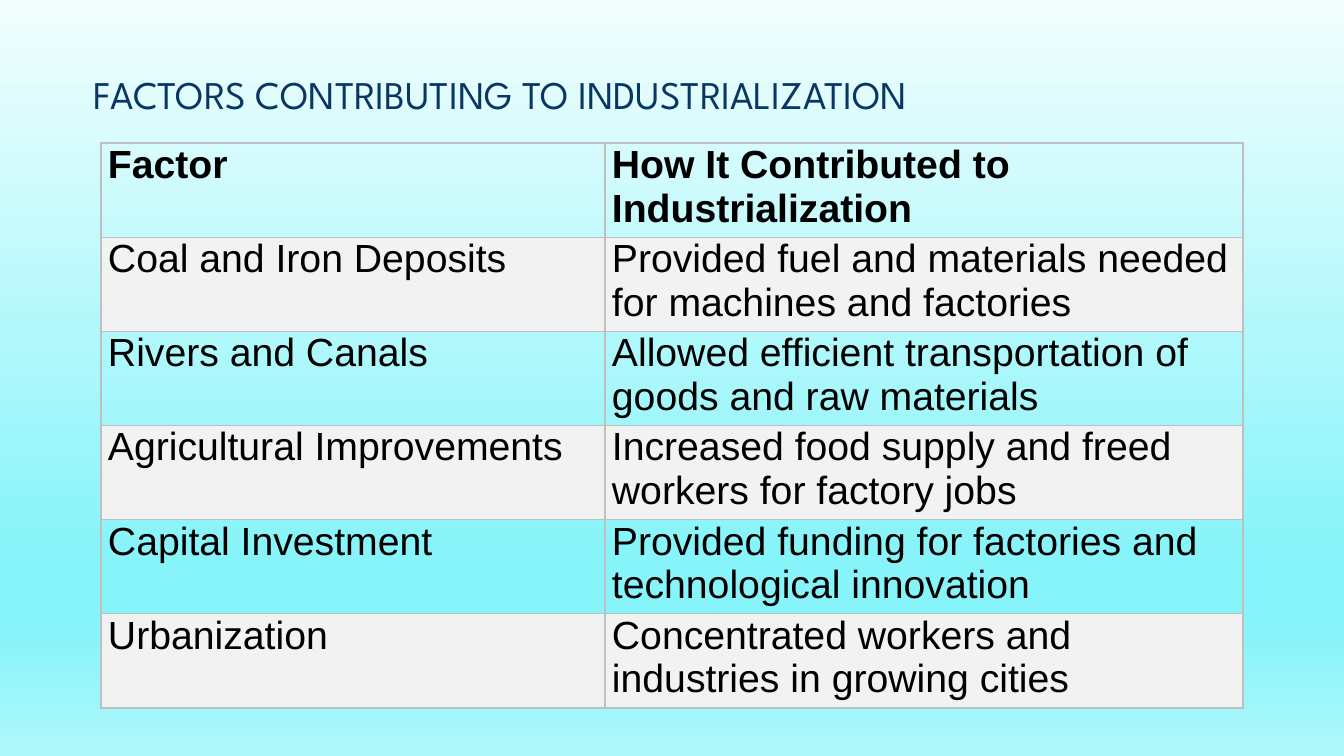
from lxml import etree
from pptx import Presentation, util as u
from pptx.dml.color import RGBColor
from pptx.enum import shapes, text
from pptx.oxml.ns import qn

# Content
TITLE = "FACTORS CONTRIBUTING TO INDUSTRIALIZATION"
FACTORS = [
    ("Factor", "How It Contributed to Industrialization"),
    ("Coal and Iron Deposits", "Provided fuel and materials needed for machines and factories"),
    ("Rivers and Canals", "Allowed efficient transportation of goods and raw materials"),
    ("Agricultural Improvements", "Increased food supply and freed workers for factory jobs"),
    ("Capital Investment", "Provided funding for factories and technological innovation"),
    ("Urbanization", "Concentrated workers and industries in growing cities"),
]
COLORS = {"title": "083763", "body": "000000", "band": "F2F2F2", "border": "BFBFBF"}
SKY = [(0, "F2FEFE"), (74, "86F4F9"), (83, "86F4F9"), (100, "AEF8FB")]

# Layout in px
SLIDE = (1344, 756)
TITLE_BOX = (84, 34, 1176, 89)
TABLE_BOX = (101, 143, 1142, 564)
COLUMNS = (504, 638)
ROW_HEIGHT = 0  # rows grow to fit their text
CELL_INSET = 7


def px(length):
    return u.Emu(round(length * 914400 / 100.8))


def write(frame, words, font, color, size=28, bold=False, spacing=None):
    frame.word_wrap = True
    paragraph = frame.paragraphs[0]
    paragraph.line_spacing = spacing
    run = paragraph.add_run()
    run.text = words
    run.font.name = font
    run.font.size = u.Pt(size)
    run.font.bold = bold
    run.font.color.rgb = RGBColor.from_string(COLORS[color])


def add_color(parent, color):
    etree.SubElement(parent, qn("a:srgbClr"), val=color)


def add_borders(cell, color, points=1):
    properties = cell._tc.get_or_add_tcPr()
    for side in ("lnL", "lnR", "lnT", "lnB"):
        line = etree.SubElement(properties, qn("a:" + side), w=str(u.Pt(points)))
        add_color(etree.SubElement(line, qn("a:solidFill")), color)


presentation = Presentation()
presentation.slide_width, presentation.slide_height = map(px, SLIDE)
slide = presentation.slides.add_slide(presentation.slide_layouts[6])

# Sky gradient, top to bottom
sky = slide.shapes.add_shape(shapes.MSO_SHAPE.RECTANGLE, 0, 0, *map(px, SLIDE))
sky.shadow.inherit = False
sky.line.fill.background()
sky.fill.gradient()
sky.fill.gradient_angle = 270
stops = sky._element.find(".//" + qn("a:gsLst"))
for stop in list(stops):
    stops.remove(stop)
for percent, color in SKY:
    add_color(etree.SubElement(stops, qn("a:gs"), pos=str(percent * 1000)), color)

# Title
heading = slide.shapes.add_textbox(*map(px, TITLE_BOX)).text_frame
heading.vertical_anchor = text.MSO_ANCHOR.BOTTOM
write(heading, TITLE, "League Spartan", "title", spacing=0.9)

# Table of factors
factors_frame = slide.shapes.add_table(len(FACTORS), len(COLUMNS), *map(px, TABLE_BOX))
factors = factors_frame.table
factors.horz_banding = False
for column, width in zip(factors.columns, COLUMNS):
    column.width = px(width)
for r, entries in enumerate(FACTORS):
    factors.rows[r].height = px(ROW_HEIGHT)
    for c, words in enumerate(entries):
        cell = factors.cell(r, c)
        cell.margin_left = cell.margin_right = px(CELL_INSET)
        cell.margin_top = cell.margin_bottom = 0
        add_borders(cell, COLORS["border"])
        if r % 2:
            cell.fill.solid()
            cell.fill.fore_color.rgb = RGBColor.from_string(COLORS["band"])
        else:
            cell.fill.background()
        write(cell.text_frame, words, "Arial", "body", bold=r == 0)
factors_frame.height = px(TABLE_BOX[3])

presentation.save("out.pptx")
